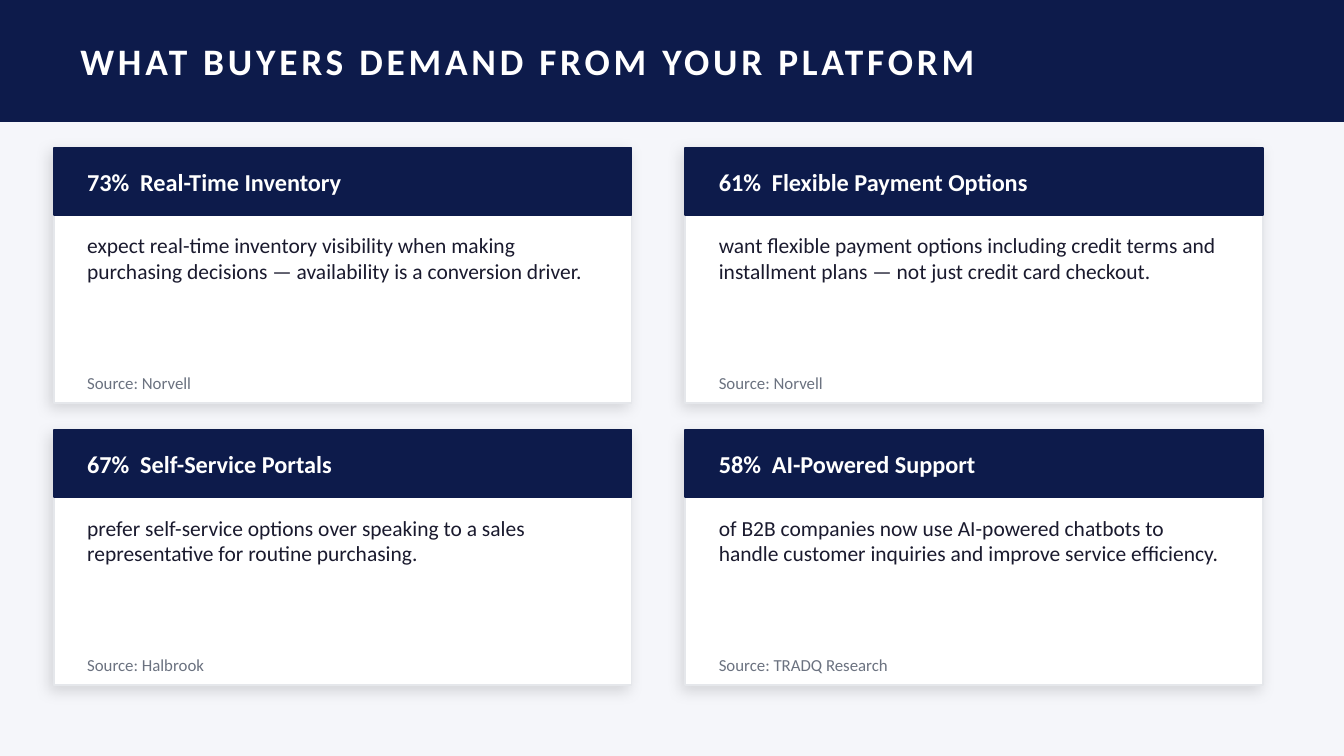
"""Build a slide with four cards on what buyers demand from a platform."""
from lxml.etree import SubElement
from pptx import Presentation
from pptx.dml.color import RGBColor
from pptx.enum.shapes import MSO_SHAPE
from pptx.enum.text import MSO_ANCHOR
from pptx.oxml.ns import qn
from pptx.util import Inches, Pt

NAVY = RGBColor(0x0D, 0x1B, 0x4B)
WHITE = RGBColor(0xFF, 0xFF, 0xFF)
BACKGROUND = RGBColor(0xF5, 0xF6, 0xFA)
BORDER = RGBColor(0xE5, 0xE7, 0xEB)
INK = RGBColor(0x1A, 0x1A, 0x2E)
GRAY = RGBColor(0x6B, 0x72, 0x80)

CARDS = [
    ("73%  Real-Time Inventory",
     "expect real-time inventory visibility when making purchasing decisions "
     "— availability is a conversion driver.",
     "Source: Norvell"),
    ("61%  Flexible Payment Options",
     "want flexible payment options including credit terms and installment "
     "plans — not just credit card checkout.",
     "Source: Norvell"),
    ("67%  Self-Service Portals",
     "prefer self-service options over speaking to a sales representative "
     "for routine purchasing.",
     "Source: Halbrook"),
    ("58%  AI-Powered Support",
     "of B2B companies now use AI-powered chatbots to handle customer "
     "inquiries and improve service efficiency.",
     "Source: TRADQ Research"),
]


class SlideBuilder:
    formats = {
        "title": {"size": Pt(20), "bold": True},
        "heading": {"size": Pt(13), "bold": True},
        "body": {"size": Pt(11.5)},
        "source": {"size": Pt(9)},
    }
    colors = {"title": WHITE, "heading": WHITE, "body": INK, "source": GRAY}

    def __init__(self, slide):
        self.slide = slide
        slide.background.fill.solid()
        slide.background.fill.fore_color.rgb = BACKGROUND

    def rectangle(self, left, top, width, height, fill, line):
        shape = self.slide.shapes.add_shape(
            MSO_SHAPE.RECTANGLE, Inches(left), Inches(top), Inches(width), Inches(height))
        shape.shadow.inherit = False
        shape.fill.solid()
        shape.fill.fore_color.rgb = fill
        shape.line.color.rgb = line
        shape.line.width = Pt(1)
        return shape

    def shadow(self, shape):
        effects = shape._element.spPr.find(qn("a:effectLst"))
        shadow = SubElement(effects, qn("a:outerShdw"), blurRad=str(Pt(8)),
                            dist=str(Pt(3)), dir=str(135 * 60000),
                            algn="bl", rotWithShape="0")
        color = SubElement(shadow, qn("a:srgbClr"), val="000000")
        SubElement(color, qn("a:alpha"), val="12000")

    def text(self, left, top, width, height, text, style,
             anchor=MSO_ANCHOR.MIDDLE, spacing=0):
        box = self.slide.shapes.add_textbox(
            Inches(left), Inches(top), Inches(width), Inches(height))
        frame = box.text_frame
        frame.word_wrap = True
        frame.vertical_anchor = anchor
        run = frame.paragraphs[0].add_run()
        run.text = text
        for name, value in {"name": "Calibri", **self.formats[style]}.items():
            setattr(run.font, name, value)
        run.font.color.rgb = self.colors[style]
        if spacing:
            run._r.get_or_add_rPr().set("spc", str(spacing * 100))

    def header(self, title):
        self.rectangle(0, 0, 10, 0.9, NAVY, NAVY)
        self.text(0.5, 0, 9, 0.9, title, "title", spacing=2)

    def card(self, left, top, heading, body, source):
        self.shadow(self.rectangle(left, top, 4.3, 1.9, WHITE, BORDER))
        self.rectangle(left, top, 4.3, 0.5, NAVY, NAVY)
        text_left = left + 0.15
        self.text(text_left, top, 4, 0.5, heading, "heading")
        self.text(text_left, top + 0.58, 3.95, 1, body, "body", MSO_ANCHOR.TOP)
        self.text(text_left, top + 1.65, 3.8, 0.2, source, "source")


def main():
    presentation = Presentation()
    presentation.slide_width = Inches(10)
    presentation.slide_height = Inches(10) * 9 // 16
    builder = SlideBuilder(presentation.slides.add_slide(presentation.slide_layouts[6]))
    builder.header("WHAT BUYERS DEMAND FROM YOUR PLATFORM")
    for index, card in enumerate(CARDS):
        row, column = divmod(index, 2)
        builder.card(0.4 + 4.7 * column, 1.1 + 2.1 * row, *card)
    presentation.save("out.pptx")


if __name__ == "__main__":
    main()
